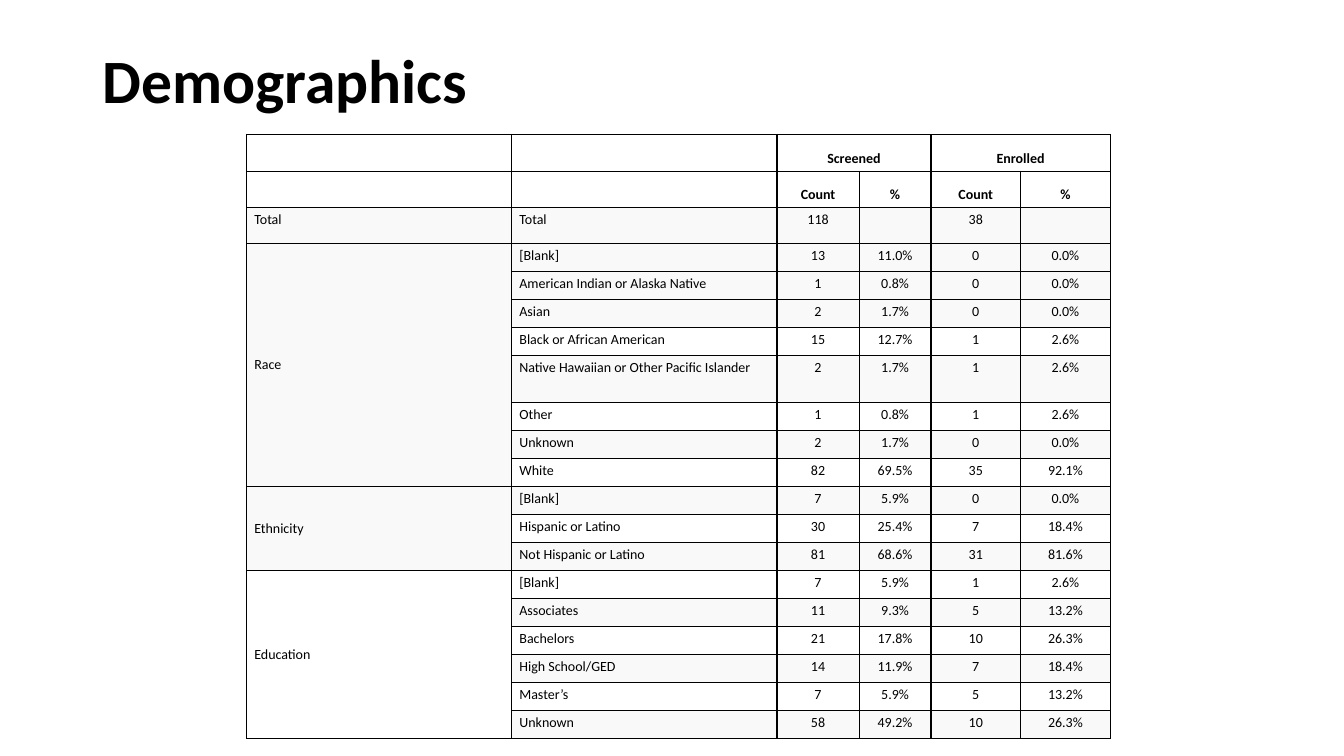
from dataclasses import dataclass

from lxml import etree
from pptx import Presentation
from pptx.dml.color import RGBColor
from pptx.enum.text import MSO_ANCHOR, PP_ALIGN
from pptx.oxml.ns import qn
from pptx.util import Cm, Pt

TOP, MIDDLE, BOTTOM = MSO_ANCHOR.TOP, MSO_ANCHOR.MIDDLE, MSO_ANCHOR.BOTTOM
LEFT, CENTER = PP_ALIGN.LEFT, PP_ALIGN.CENTER

HEADINGS = [
    ("", "", "Screened", "", "Enrolled", ""),
    ("", "", "Count", "%", "Count", "%"),
]
GROUPS = {
    "Total": [("Total", "118", "", "38", "")],
    "Race": [
        ("[Blank]", "13", "11.0%", "0", "0.0%"),
        ("American Indian or Alaska Native", "1", "0.8%", "0", "0.0%"),
        ("Asian", "2", "1.7%", "0", "0.0%"),
        ("Black or African American", "15", "12.7%", "1", "2.6%"),
        ("Native Hawaiian or Other Pacific Islander", "2", "1.7%", "1", "2.6%"),
        ("Other", "1", "0.8%", "1", "2.6%"),
        ("Unknown", "2", "1.7%", "0", "0.0%"),
        ("White", "82", "69.5%", "35", "92.1%"),
    ],
    "Ethnicity": [
        ("[Blank]", "7", "5.9%", "0", "0.0%"),
        ("Hispanic or Latino", "30", "25.4%", "7", "18.4%"),
        ("Not Hispanic or Latino", "81", "68.6%", "31", "81.6%"),
    ],
    "Education": [
        ("[Blank]", "7", "5.9%", "1", "2.6%"),
        ("Associates", "11", "9.3%", "5", "13.2%"),
        ("Bachelors", "21", "17.8%", "10", "26.3%"),
        ("High School/GED", "14", "11.9%", "7", "18.4%"),
        ("Master’s", "7", "5.9%", "5", "13.2%"),
        ("Unknown", "58", "49.2%", "10", "26.3%"),
    ],
}
COLUMN_WIDTHS = [6.68, 6.68, 2.07, 1.81, 2.26, 2.26]
TABLE_HEIGHT = 14.6
TALL_ROW, TALL_HEIGHT = 7, 1.19
EXTRA_SHADED_ROWS = (2, 4)  # shaded besides the odd rows


@dataclass(frozen=True)
class Theme:
    font: str = "Calibri"
    ink: str = "000000"
    shade: str = "F9F9F9"
    title_size: int = 44
    cell_size: int = 10
    outer_line: float = 1
    inner_line: float = 0.6


class SlideBuilder:
    def __init__(self, slide, theme):
        self.slide = slide
        self.theme = theme

    def style_text(self, paragraph, size, bold, align):
        paragraph.alignment = align
        for run in paragraph.runs:
            run.font.name = self.theme.font
            run.font.size = Pt(size)
            run.font.bold = bold
            run.font.color.rgb = RGBColor.from_string(self.theme.ink)

    def title(self, wording, left, top, width, height):
        heading = self.slide.shapes.title
        heading.left, heading.top = Cm(left), Cm(top)
        heading.width, heading.height = Cm(width), Cm(height)
        frame = heading.text_frame
        frame.text = wording
        frame.vertical_anchor = MIDDLE
        frame.paragraphs[0].line_spacing = 0.9
        self.style_text(frame.paragraphs[0], self.theme.title_size, True, LEFT)

    def borders(self, cell, **widths):
        properties = cell._tc.get_or_add_tcPr()
        for side, width in widths.items():
            line = etree.SubElement(properties, qn(f"a:ln{side}"), w=str(Pt(width)))
            paint = etree.SubElement(line, qn("a:solidFill"))
            etree.SubElement(paint, qn("a:srgbClr"), val=self.theme.ink)

    def cell(self, cell, wording, shaded, bold, align, anchor):
        cell.margin_left = cell.margin_right = Cm(0.19)
        # Blank cells keep the default text size, which makes their row taller.
        cell.margin_top = cell.margin_bottom = Cm(0.1 if wording else 0.07)
        cell.vertical_anchor = anchor
        if shaded:
            cell.fill.solid()
            cell.fill.fore_color.rgb = RGBColor.from_string(self.theme.shade)
        else:
            cell.fill.background()
        if wording:
            cell.text_frame.text = wording
            self.style_text(cell.text_frame.paragraphs[0], self.theme.cell_size, bold, align)

    def demographics_table(self, left, top):
        theme = self.theme
        rows = list(HEADINGS)
        group_spans = []
        for group, entries in GROUPS.items():
            group_spans.append((len(rows), len(rows) + len(entries) - 1))
            rows += [(group if i == 0 else "", *entry) for i, entry in enumerate(entries)]
        last = len(rows) - 1

        table = self.slide.shapes.add_table(
            len(rows), len(COLUMN_WIDTHS), Cm(left), Cm(top),
            Cm(sum(COLUMN_WIDTHS)), Cm(TABLE_HEIGHT)).table
        table.first_row = table.horz_banding = False
        for column, width in zip(table.columns, COLUMN_WIDTHS):
            column.width = Cm(width)
        for r, row in enumerate(table.rows):
            row.height = Cm(TALL_HEIGHT if r == TALL_ROW
                            else (TABLE_HEIGHT - TALL_HEIGHT) / last)

        for column in (2, 4):
            table.cell(0, column).merge(table.cell(0, column + 1))
        for first, final in group_spans:
            if final > first:
                table.cell(first, 0).merge(table.cell(final, 0))

        for r, values in enumerate(rows):
            is_heading = r < len(HEADINGS)
            shaded = not is_heading and (r % 2 == 1 or r in EXTRA_SHADED_ROWS)
            for c, wording in enumerate(values):
                cell = table.cell(r, c)
                final_row = r + cell.span_height - 1 if cell.is_merge_origin else r
                self.borders(
                    cell, L=theme.outer_line, R=theme.outer_line,
                    T=theme.outer_line if r == 0 else theme.inner_line,
                    B=theme.outer_line if final_row == last else theme.inner_line)
                if is_heading:
                    anchor = BOTTOM
                else:
                    anchor = MIDDLE if cell.is_merge_origin else TOP
                self.cell(cell, wording, shaded, is_heading,
                          CENTER if c >= 2 else LEFT, anchor)


def main():
    deck = Presentation()
    deck.slide_width, deck.slide_height = Cm(33.87), Cm(19.05)
    title_only = deck.slide_layouts[5]
    builder = SlideBuilder(deck.slides.add_slide(title_only), Theme())
    builder.title("Demographics", 2.33, 0.81, 29.21, 2.57)
    builder.demographics_table(6.22, 3.39)
    deck.save("out.pptx")


if __name__ == "__main__":
    main()
